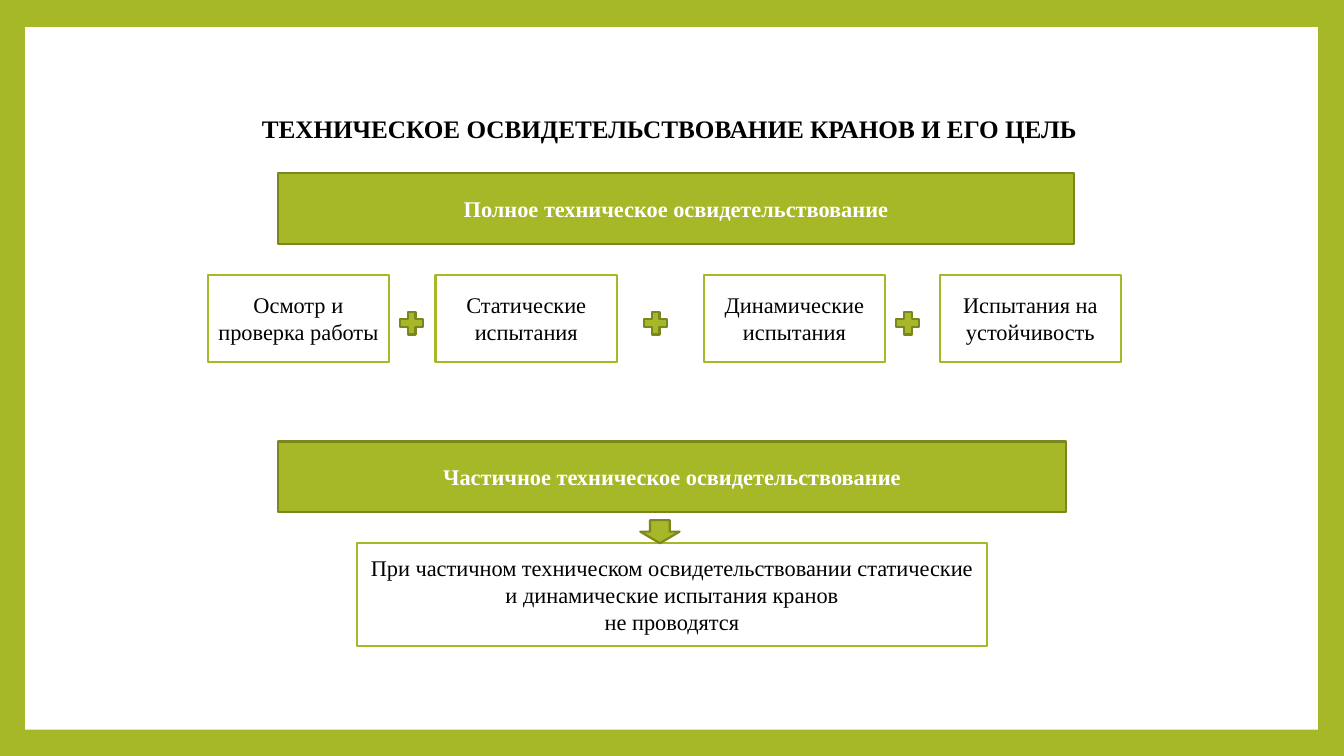
import dataclasses

import pptx
import pptx.dml.color
import pptx.enum.shapes
import pptx.enum.text
import pptx.shapes.autoshape
import pptx.slide
import pptx.text.text
import pptx.util

Inches = pptx.util.Inches
Preset = pptx.enum.shapes.MSO_SHAPE

COLORS = {"green": "A6B727", "olive": "7B871D", "white": "FFFFFF", "black": "000000"}
FONT = "Times New Roman"


@dataclasses.dataclass(frozen=True)
class Style:
    fill: str
    line: str | None = None
    ink: str = "black"
    bold: bool = False


@dataclasses.dataclass(frozen=True)
class Item:
    left: float
    top: float
    width: float
    height: float
    style: Style
    text: str = ""
    preset: Preset = Preset.RECTANGLE


PANEL = Style("white")
BANNER = Style("green", "olive", "white", True)
CARD = Style("white", "green")

TESTS = [
    (2.06, "Осмотр и проверка работы"),
    (4.32, "Статические испытания"),
    (6.98, "Динамические испытания"),
    (9.32, "Испытания на устойчивость"),
]
PLUSES = [3.93, 6.35, 8.85]
NOTE = (
    "При частичном техническом освидетельствовании статические "
    "и динамические испытания кранов\nне проводятся"
)

ITEMS = [
    Item(2.76, 1.72, 7.89, 0.7, BANNER, "Полное техническое освидетельствование"),
    *[Item(left, 2.73, 1.8, 0.86, CARD, text) for left, text in TESTS],
    *[Item(left, 3.05, 0.31, 0.31, BANNER, preset=Preset.MATH_PLUS) for left in PLUSES],
    Item(2.76, 4.38, 7.81, 0.7, BANNER, "Частичное техническое освидетельствование"),
    Item(3.54, 5.39, 6.25, 1.02, CARD, NOTE),
    Item(6.35, 5.16, 0.39, 0.23, BANNER, preset=Preset.DOWN_ARROW),
]


def get_color(name: str) -> pptx.dml.color.RGBColor:
    return pptx.dml.color.RGBColor.from_string(COLORS[name])


def set_text(frame: pptx.text.text.TextFrame, text: str, size: int, ink: str, bold: bool) -> None:
    frame.text = text
    frame.word_wrap = True
    frame.vertical_anchor = pptx.enum.text.MSO_ANCHOR.MIDDLE
    for line in frame.paragraphs:
        line.alignment = pptx.enum.text.PP_ALIGN.CENTER
        for run in line.runs:
            run.font.name = FONT
            run.font.size = pptx.util.Pt(size)
            run.font.bold = bold
            run.font.color.rgb = get_color(ink)


def draw_item(slide: pptx.slide.Slide, item: Item) -> pptx.shapes.autoshape.Shape:
    place = [Inches(x) for x in (item.left, item.top, item.width, item.height)]
    shape = slide.shapes.add_shape(item.preset, *place)
    style = item.style
    shape.shadow.inherit = False
    shape.fill.solid()
    shape.fill.fore_color.rgb = get_color(style.fill)
    if style.line:
        shape.line.color.rgb = get_color(style.line)
        shape.line.width = pptx.util.Pt(1.5)
    else:
        shape.line.fill.background()
    if item.text:
        set_text(shape.text_frame, item.text, 16, style.ink, style.bold)
    return shape


def draw_title(slide: pptx.slide.Slide) -> None:
    title = slide.shapes.title
    title.left, title.top = Inches(2.14), Inches(1.02)
    title.width, title.height = Inches(9), Inches(0.55)
    text = "ТЕХНИЧЕСКОЕ ОСВИДЕТЕЛЬСТВОВАНИЕ КРАНОВ И ЕГО ЦЕЛЬ"
    set_text(title.text_frame, text, 18, "black", True)
    title.text_frame.paragraphs[0].line_spacing = 0.9


def main() -> None:
    deck = pptx.Presentation()
    deck.slide_width, deck.slide_height = Inches(13.33), Inches(7.5)
    slide = deck.slides.add_slide(deck.slide_layouts[5])
    slide.background.fill.solid()
    slide.background.fill.fore_color.rgb = get_color("green")

    panel = draw_item(slide, Item(0.25, 0.27, 12.82, 6.97, PANEL))
    draw_title(slide)
    # The title must lie in front of the panel.
    panel.element.addnext(slide.shapes.title.element)
    for item in ITEMS:
        draw_item(slide, item)
    deck.save("out.pptx")


if __name__ == "__main__":
    main()
